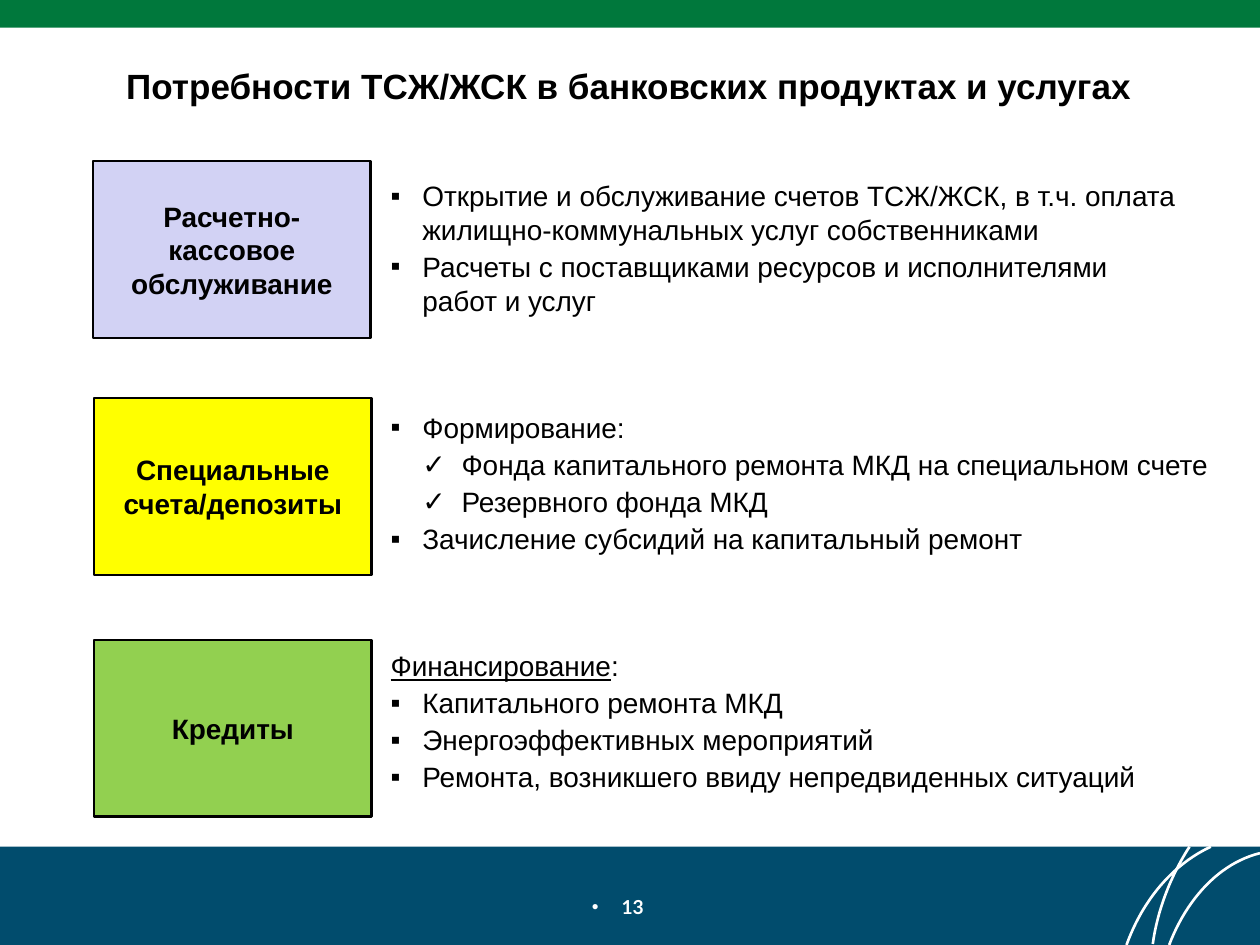
from dataclasses import dataclass
from lxml.etree import SubElement
from pptx import Presentation
from pptx.dml.color import RGBColor
from pptx.enum.shapes import MSO_SHAPE as Shape
from pptx.enum.text import MSO_ANCHOR as Anchor, MSO_AUTO_SIZE as AutoSize, PP_ALIGN as Align
from pptx.oxml.ns import qn
from pptx.util import Cm, Pt

COLORS = {
    "black": "000000", "white": "FFFFFF", "green": "00783C", "navy": "014C6D",
    "lavender": "D2D2F4", "yellow": "FFFF00", "lime": "92D050",
}
SLIDE_W, SLIDE_H = 25.4, 19.05
FOOTER_TOP = 17.07
BOX_W, BOX_H = 5.59, 3.56
LIST_LEFT = 7.62
SQUARE, CHECK, DOT = "▪", "✓", "•"


@dataclass
class Item:
    text: str
    bullet: str = SQUARE
    level: int = 0
    underlined: str = ""


@dataclass
class Need:
    label: str
    color: str
    left: float
    top: float
    list_top: float
    list_w: float
    list_h: float
    items: list[Item]


NEEDS = [
    Need("Расчетно-кассовое обслуживание", "lavender", 1.88, 3.25, 3.48, 16.51, 3.07, [
        Item("Открытие и обслуживание счетов ТСЖ/ЖСК, в т.ч. оплата "
             "жилищно-коммунальных услуг собственниками"),
        Item("Расчеты с поставщиками ресурсов и исполнителями работ и услуг"),
    ]),
    Need("Специальные счета/депозиты", "yellow", 1.9, 8.03, 8.15, 17.12, 3.2, [
        Item("Формирование:"),
        Item("Фонда капитального ремонта МКД на специальном счете", CHECK, 1),
        Item("Резервного фонда МКД", CHECK, 1),
        Item("Зачисление субсидий на капитальный ремонт"),
    ]),
    Need("Кредиты", "lime", 1.9, 12.9, 12.95, 15.85, 3.2, [
        Item(":", "", underlined="Финансирование"),
        Item("Капитального ремонта МКД"),
        Item("Энергоэффективных мероприятий"),
        Item("Ремонта, возникшего ввиду непредвиденных ситуаций"),
    ]),
]

# Cubic curves in the footer corner: start, two controls, end
ARCS = [
    ((24.41, 17.07), (23.65, 17.42), (23.04, 18.14), (22.71, 19.05)),
    ((25.4, 17.2), (24.59, 17.4), (23.93, 18.11), (23.57, 19.05)),
    ((23.98, 17.07), (23.62, 17.63), (23.34, 18.31), (23.24, 19.03)),
]


def rgb(name: str) -> RGBColor:
    return RGBColor.from_string(COLORS[name])


def place(s, left: float, top: float, width: float, height: float) -> None:
    s.left, s.top, s.width, s.height = map(Cm, (left, top, width, height))


def add_run(p, text: str, color: str = "black", **formats) -> None:
    r = p.add_run()
    r.text = text
    r.font.color.rgb = rgb(color)
    for key, value in ({"name": "Arial", "size": Pt(16), "bold": False} | formats).items():
        setattr(r.font, key, value)


def set_bullet(p, char: str, margin: float, hanging: float) -> None:
    pPr = p._p.get_or_add_pPr()
    pPr.set("marL", str(Cm(margin)))
    pPr.set("indent", str(-Cm(hanging)))
    if char:
        SubElement(pPr, qn("a:buFont"), typeface="Arial")
        SubElement(pPr, qn("a:buChar"), char=char)
    else:
        SubElement(pPr, qn("a:buNone"))


def set_frame(tf, anchor: Anchor) -> None:
    formats = {"word_wrap": True, "auto_size": AutoSize.NONE, "vertical_anchor": anchor}
    for key, value in formats.items():
        setattr(tf, key, value)


def add_rect(shapes, left: float, top: float, width: float, height: float, color: str):
    s = shapes.add_shape(Shape.RECTANGLE, Cm(left), Cm(top), Cm(width), Cm(height))
    s.shadow.inherit = False
    s.fill.solid()
    s.fill.fore_color.rgb = rgb(color)
    s.line.fill.background()
    return s


def add_arc(shapes, a, b, c, d, steps: int = 24) -> None:
    """Draw a cubic Bezier curve as a fine open polyline."""
    points = []
    for i in range(steps + 1):
        t = i / steps
        weights = ((1 - t) ** 3, 3 * t * (1 - t) ** 2, 3 * t * t * (1 - t), t ** 3)
        points.append(tuple(Cm(sum(w * q[axis] for w, q in zip(weights, (a, b, c, d))))
                            for axis in (0, 1)))
    builder = shapes.build_freeform(*points[0])
    builder.add_line_segments(points[1:], close=False)
    s = builder.convert_to_shape()
    s.shadow.inherit = False
    s.fill.background()
    s.line.color.rgb = rgb("white")
    s.line.width = Pt(1.5)


def add_label(shapes, need: Need) -> None:
    s = add_rect(shapes, need.left, need.top, BOX_W, BOX_H, need.color)
    s.line.color.rgb = rgb("black")
    s.line.width = Pt(1.25)
    tf = s.text_frame
    set_frame(tf, Anchor.MIDDLE)
    tf.margin_left = tf.margin_right = Cm(0.45)
    p = tf.paragraphs[0]
    p.alignment = Align.CENTER
    add_run(p, need.label, bold=True)


def fill_list(sp, need: Need) -> None:
    place(sp, LIST_LEFT, need.list_top, need.list_w, need.list_h)
    tf = sp.text_frame
    set_frame(tf, Anchor.TOP)
    for i, item in enumerate(need.items):
        p = tf.add_paragraph() if i else tf.paragraphs[0]
        p.level = item.level
        p.space_before = Pt(2)
        p.line_spacing = 1.0
        set_bullet(p, item.bullet, *((1.43, 0.79) if item.level else (0.64, 0.64)))
        if item.underlined:
            add_run(p, item.underlined, underline=True)
        add_run(p, item.text)


def add_page_number(shapes, number: str) -> None:
    sp = shapes.add_textbox(Cm(10.08), Cm(17.88), Cm(5.23), Cm(0.79))
    set_frame(sp.text_frame, Anchor.MIDDLE)
    p = sp.text_frame.paragraphs[0]
    p.alignment = Align.LEFT
    set_bullet(p, DOT, 2.2, 0.6)
    add_run(p, number, "white", name="Lato", size=Pt(11), bold=True)


def main() -> None:
    prs = Presentation()
    prs.slide_width, prs.slide_height = Cm(SLIDE_W), Cm(SLIDE_H)
    slide = prs.slides.add_slide(prs.slide_layouts.get_by_name("Comparison"))
    shapes = slide.shapes
    title, *bodies = slide.placeholders

    add_rect(shapes, 0, FOOTER_TOP, SLIDE_W, SLIDE_H - FOOTER_TOP, "navy")
    for arc in ARCS:
        add_arc(shapes, *arc)
    add_rect(shapes, 0, 0, SLIDE_W, 0.56, "green")
    add_page_number(shapes, "13")

    place(title, 1.22, 1.17, 22.91, 1.12)
    set_frame(title.text_frame, Anchor.MIDDLE)
    p = title.text_frame.paragraphs[0]
    p.alignment = Align.CENTER
    add_run(p, "Потребности ТСЖ/ЖСК в банковских продуктах и услугах", size=Pt(20), bold=True)

    for need, body in zip(NEEDS, bodies):
        add_label(shapes, need)
        fill_list(body, need)
    for spare in bodies[len(NEEDS):]:
        spare.element.getparent().remove(spare.element)
    prs.save("out.pptx")


if __name__ == "__main__":
    main()
